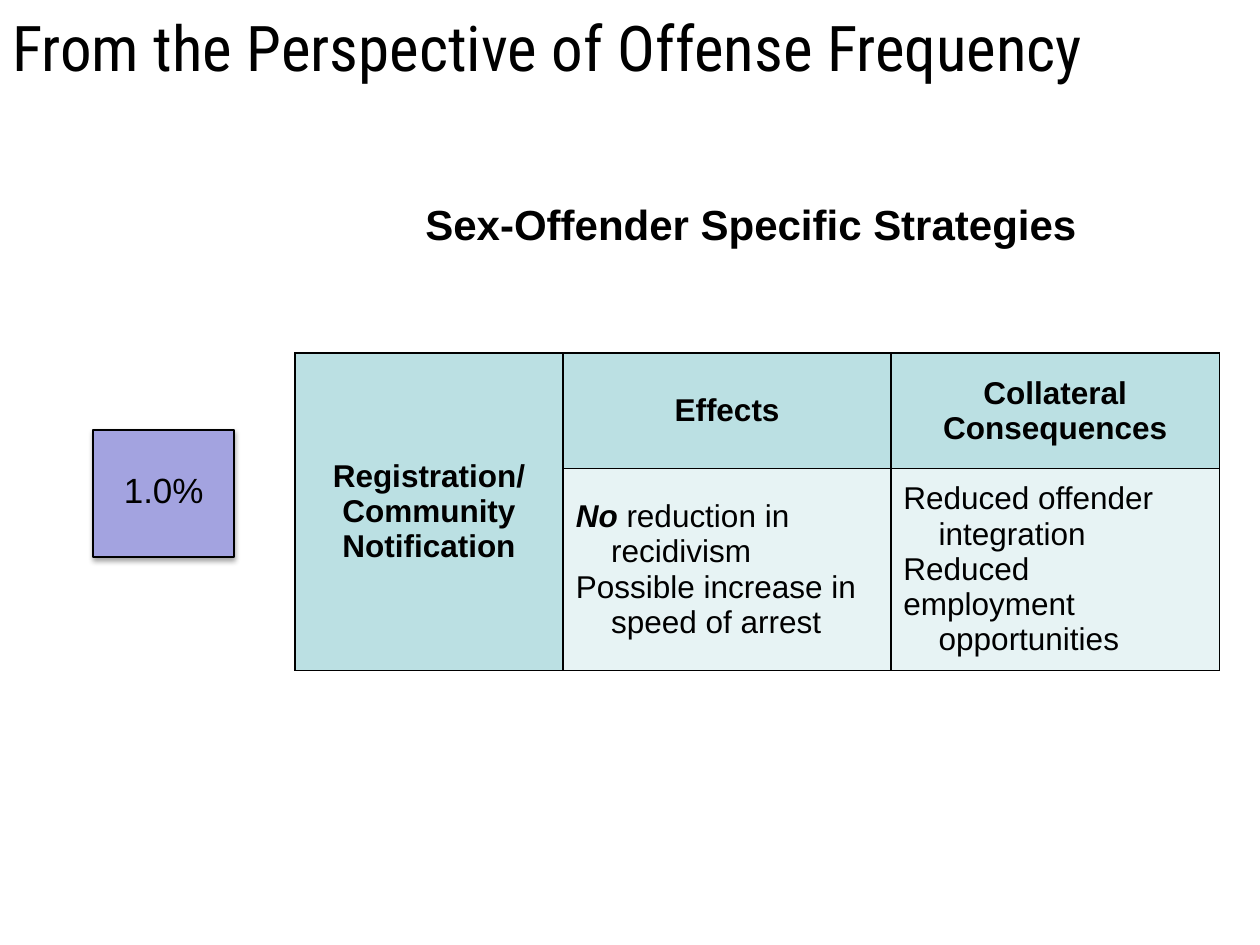
from lxml.etree import SubElement
from pptx import Presentation
from pptx.dml.color import RGBColor
from pptx.enum.shapes import MSO_SHAPE
from pptx.enum.text import MSO_ANCHOR, PP_ALIGN
from pptx.oxml.ns import qn
from pptx.util import Inches, Pt

COLORS = {"ink": "000000", "header": "BBE0E3", "body": "E7F3F4", "badge": "A3A3E0"}
BODY_FONT = "Arial"
TITLE_FONT = "Roboto Condensed"
INDENT = Inches(0.28)


def rgb(name):
    return RGBColor.from_string(COLORS[name])


def write_text(paragraph, text, size=18, font=BODY_FONT, bold=False, italic=False,
               align=PP_ALIGN.LEFT, indent=0):
    paragraph.alignment = align
    if indent:
        paragraph._p.get_or_add_pPr().set("marL", str(indent))
    run = paragraph.add_run()
    run.text = text
    run.font.size = Pt(size)
    run.font.name = font
    run.font.bold = bold
    run.font.italic = italic
    run.font.color.rgb = rgb("ink")


def add_label(shapes, box, text, wrap=False, anchor=MSO_ANCHOR.TOP, **text_format):
    frame = shapes.add_textbox(*map(Inches, box)).text_frame
    frame.word_wrap = wrap
    frame.vertical_anchor = anchor
    write_text(frame.paragraphs[0], text, **text_format)


def add_drop_shadow(shape):
    effects = SubElement(shape._element.spPr, qn("a:effectLst"))
    shadow = SubElement(effects, qn("a:outerShdw"), blurRad=str(Pt(3.1)),
                        dist=str(Pt(1.8)), dir="5400000", rotWithShape="0")
    color = SubElement(shadow, qn("a:srgbClr"), val=COLORS["ink"])
    SubElement(color, qn("a:alpha"), val="35000")


def add_badge(slide, box, text):
    """Place a shadowed square with a percentage across its middle."""
    left, top, width, height = box
    group = slide.shapes.add_group_shape()
    square = group.shapes.add_shape(MSO_SHAPE.RECTANGLE, *map(Inches, box))
    square.fill.solid()
    square.fill.fore_color.rgb = rgb("badge")
    square.line.color.rgb = rgb("ink")
    square.line.width = Pt(1)
    add_drop_shadow(square)
    label_box = (left + 0.14, top + 0.26, width - 0.28, 0.44)
    add_label(group.shapes, label_box, text, size=20, align=PP_ALIGN.CENTER)


def set_cell_style(cell, fill):
    properties = cell._tc.get_or_add_tcPr()
    for side in ("lnL", "lnR", "lnT", "lnB"):
        line = SubElement(properties, qn(f"a:{side}"), w=str(Pt(1)))
        line_fill = SubElement(line, qn("a:solidFill"))
        SubElement(line_fill, qn("a:srgbClr"), val=COLORS["ink"])
    cell.fill.solid()
    cell.fill.fore_color.rgb = rgb(fill)
    cell.vertical_anchor = MSO_ANCHOR.MIDDLE


def next_paragraph(frame, index):
    return frame.add_paragraph() if index else frame.paragraphs[0]


def fill_header(cell, lines):
    for index, line in enumerate(lines):
        write_text(next_paragraph(cell.text_frame, index), line, bold=True,
                   align=PP_ALIGN.CENTER)


def fill_findings(cell, findings):
    """Write each finding as a first line and an indented second one."""
    lines = [line for finding in findings for line in finding]
    for index, line in enumerate(lines):
        paragraph = next_paragraph(cell.text_frame, index)
        if line.startswith("No "):
            write_text(paragraph, "No", bold=True, italic=True)
            line = line.removeprefix("No")
        write_text(paragraph, line, indent=INDENT if index % 2 else 0)


def add_strategy_table(slide, box, column_widths, row_heights):
    table = slide.shapes.add_table(2, 3, *map(Inches, box)).table
    for column, width in zip(table.columns, column_widths):
        column.width = Inches(width)
    for row, height in zip(table.rows, row_heights):
        row.height = Inches(height)
    for row in range(2):
        for column in range(3):
            fill = "body" if row and column else "header"
            set_cell_style(table.cell(row, column), fill)
    table.cell(0, 0).merge(table.cell(1, 0))

    headers = [
        ["Registration/", "Community Notification"],
        ["Effects"],
        ["Collateral", "Consequences"],
    ]
    for column, lines in enumerate(headers):
        fill_header(table.cell(0, column), lines)

    findings = [
        [("No reduction in", "recidivism"),
         ("Possible increase in", "speed of arrest")],
        [("Reduced offender", "integration"),
         ("Reduced employment", "opportunities")],
    ]
    for column, column_findings in enumerate(findings, start=1):
        fill_findings(table.cell(1, column), column_findings)


def main():
    presentation = Presentation()
    presentation.slide_width = Inches(10)
    presentation.slide_height = Inches(7.5)
    slide = presentation.slides.add_slide(presentation.slide_layouts[6])

    add_badge(slide, (0.74, 3.41, 1.12, 1.01), "1.0%")
    add_label(slide.shapes, (0, 0.08, 10, 0.58),
              "From the Perspective of Offense Frequency", wrap=True,
              anchor=MSO_ANCHOR.MIDDLE, size=36, font=TITLE_FONT)
    add_label(slide.shapes, (3.25, 1.53, 5.42, 0.5), "Sex-Offender Specific Strategies",
              size=24, bold=True, align=PP_ALIGN.CENTER)
    add_strategy_table(slide, (2.34, 2.8, 7.34, 2.52), (2.13, 2.6, 2.61), (0.92, 1.6))

    presentation.save("out.pptx")


if __name__ == "__main__":
    main()
